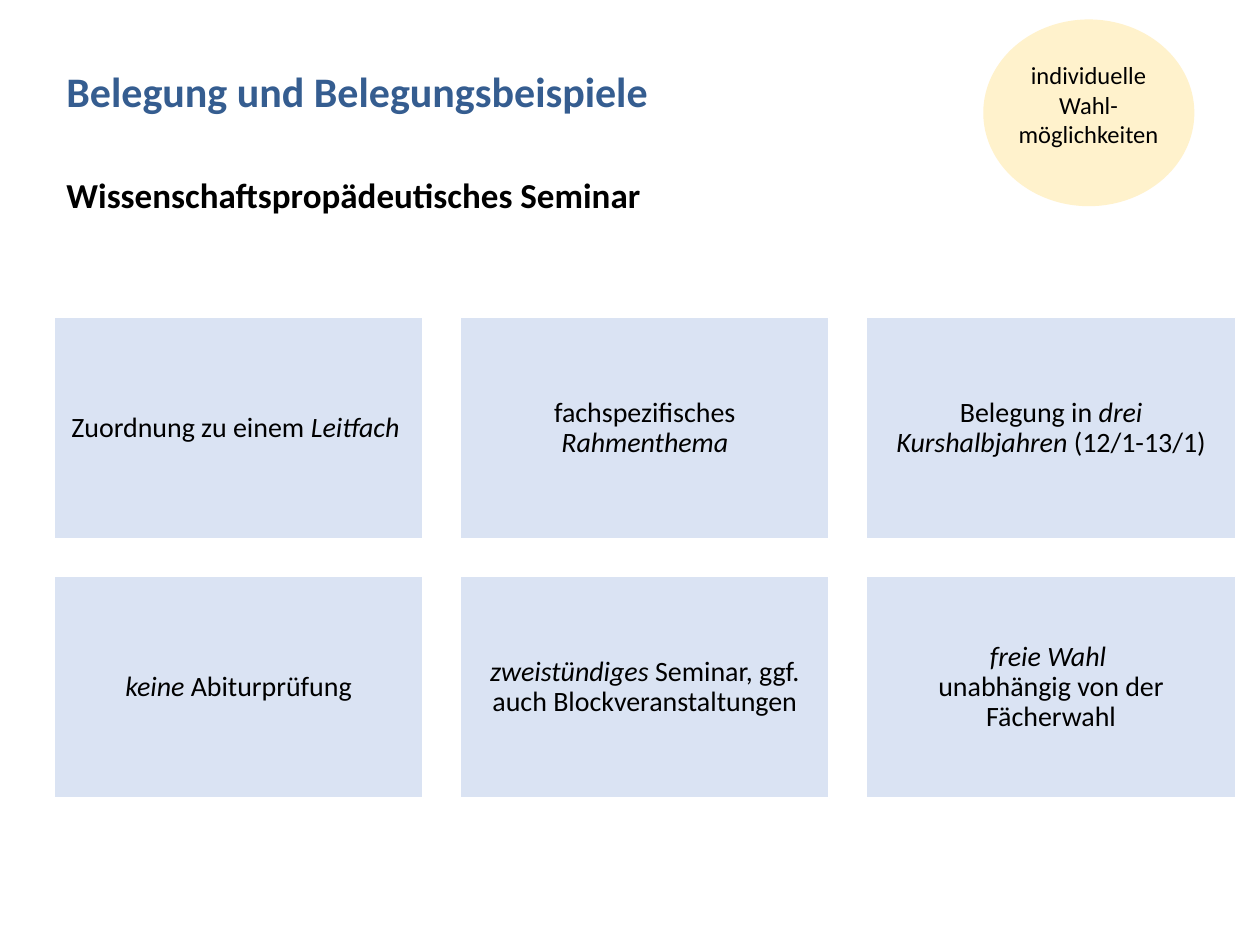
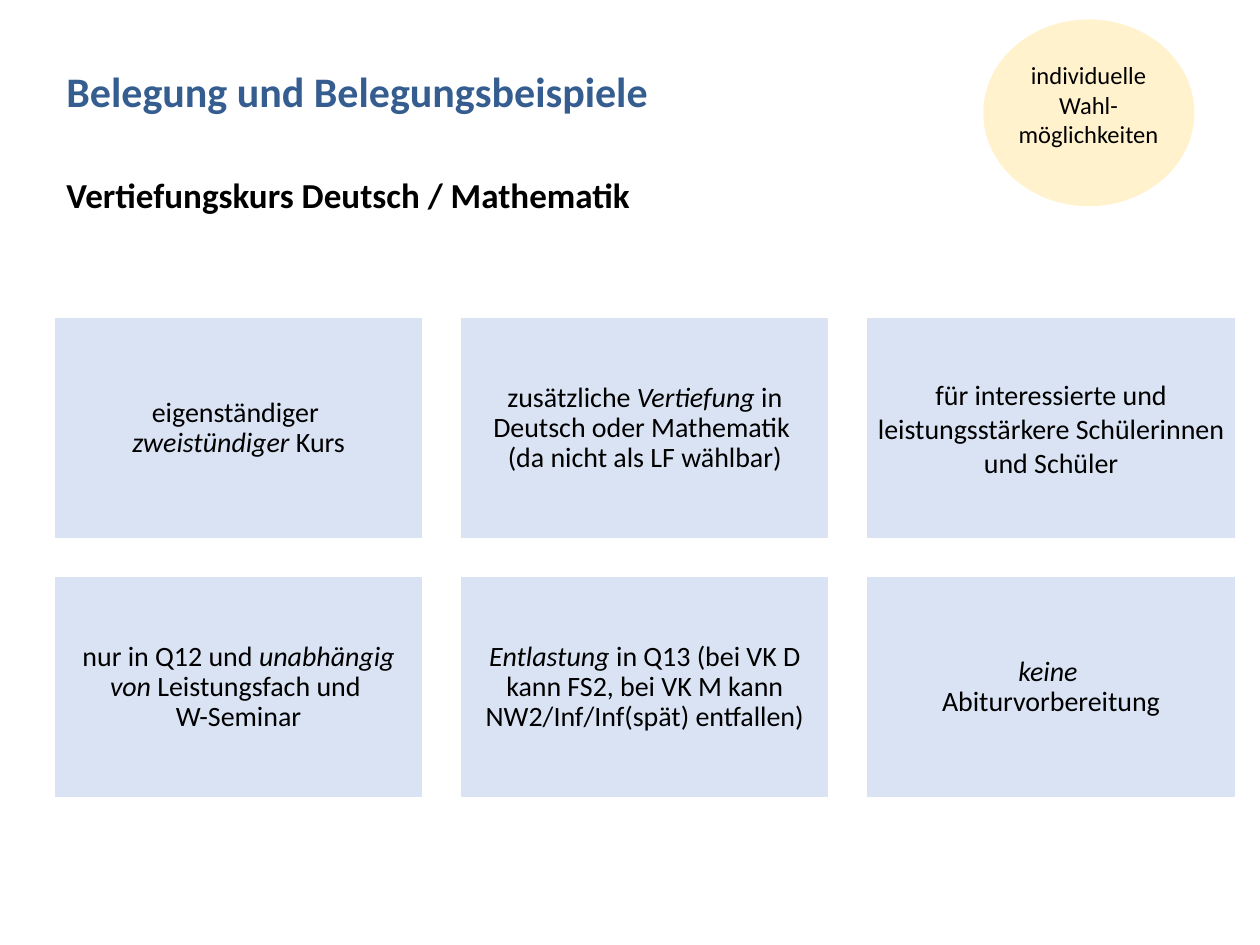
from dataclasses import dataclass

from pptx import Presentation
from pptx.dml.color import RGBColor as Rgb
from pptx.enum.shapes import MSO_SHAPE as Preset
from pptx.enum.text import MSO_ANCHOR as Anchor, PP_ALIGN as Align
from pptx.util import Cm, Pt


@dataclass(frozen=True)
class Theme:
    """Colours, typeface and type sizes shared by the slides."""
    font: str = "Calibri"
    heading: Rgb = Rgb(0x35, 0x5D, 0x90)
    ink: Rgb = Rgb(0, 0, 0)
    card: Rgb = Rgb(0xDA, 0xE3, 0xF3)
    card_edge: Rgb = Rgb(0xFF, 0xFF, 0xFF)
    badge: Rgb = Rgb(0xFF, 0xF2, 0xCC)
    heading_size: Pt = Pt(24)
    topic_size: Pt = Pt(20)
    card_size: Pt = Pt(16)
    badge_size: Pt = Pt(14)


THEME = Theme()
LEFT = 1.09
GRID_TOP = 6.4
CARD_WIDTH, CARD_HEIGHT = 7.44, 4.47
CARD_GAP = 0.75
CARD_INSET = Cm(0.18)
COLUMNS = 3
HEADING = "Belegung und Belegungsbeispiele"
BADGE_LINES = ("individuelle", "Wahl-", "möglichkeiten")

TOPICS = {
    "Wissenschaftspropädeutisches Seminar": (
        ("Zuordnung zu einem *Leitfach *", 0.9),
        ("fachspezifisches *Rahmenthema*", 0.9),
        ("Belegung in *drei Kurshalbjahren *(12/1-13/1)", 0.9),
        ("*keine *Abiturprüfung", 0.9),
        ("*zweistündiges *Seminar, ggf. auch Blockveranstaltungen", 0.9),
        ("*freie Wahl \n*unabhängig von der Fächerwahl", 0.9),
    ),
    "Vertiefungskurs Deutsch / Mathematik": (
        ("eigenständiger \n*zweistündiger* Kurs", 0.9),
        ("zusätzliche *Vertiefung* in Deutsch oder Mathematik \n"
         "(da nicht als LF wählbar)", 0.9),
        ("für interessierte und leistungsstärkere Schülerinnen und Schüler", 1.0),
        ("nur in Q12 und *unabhängig von* Leistungsfach und \nW-Seminar", 0.9),
        ("*Entlastung *in Q13 (bei VK D kann FS2, bei VK M kann "
         "NW2/Inf/Inf(spät) entfallen)", 0.9),
        ("*keine \n*Abiturvorbereitung", 0.9),
    ),
}


def style_paragraph(paragraph, size, color=THEME.ink, bold=False, align=Align.LEFT):
    """Set the font and alignment of a whole paragraph."""
    font = paragraph.font
    font.name, font.size, font.bold = THEME.font, size, bold
    font.color.rgb = color
    paragraph.alignment = align


def add_marked_text(paragraph, marked):
    """Add runs, with the parts between asterisks in italics."""
    for index, part in enumerate(marked.split("*")):
        for line_index, line in enumerate(part.split("\n")):
            if line_index:
                paragraph.add_line_break()
            if line:
                run = paragraph.add_run()
                run.text = line
                if index % 2:
                    run.font.italic = True


def add_text(slide, lines, left, top, width, height, **style):
    """Add a text box with one paragraph per line."""
    frame = slide.shapes.add_textbox(Cm(left), Cm(top), Cm(width), Cm(height)).text_frame
    frame.word_wrap = True
    frame.text = "\n".join(lines)
    for paragraph in frame.paragraphs:
        style_paragraph(paragraph, **style)


def add_filled(slide, preset, left, top, width, height, fill, edge):
    """Add a flat preset shape with a thin outline."""
    shape = slide.shapes.add_shape(preset, Cm(left), Cm(top), Cm(width), Cm(height))
    shape.shadow.inherit = False
    shape.fill.solid()
    shape.fill.fore_color.rgb = fill
    shape.line.color.rgb = edge
    shape.line.width = Pt(1)
    return shape


def add_card(slide, left, top, marked, spacing):
    """Add one card with its centred statement."""
    card = add_filled(slide, Preset.RECTANGLE, left, top, CARD_WIDTH, CARD_HEIGHT,
                      THEME.card, THEME.card_edge)
    frame = card.text_frame
    frame.word_wrap = True
    frame.vertical_anchor = Anchor.MIDDLE
    frame.margin_left = frame.margin_right = CARD_INSET
    frame.margin_top = frame.margin_bottom = CARD_INSET
    statement = frame.paragraphs[0]
    style_paragraph(statement, THEME.card_size, align=Align.CENTER)
    statement.line_spacing = spacing
    add_marked_text(statement, marked)


def add_card_grid(slide, cards):
    """Lay the cards out row by row with equal gaps."""
    for index, (marked, spacing) in enumerate(cards):
        row, column = divmod(index, COLUMNS)
        add_card(slide, LEFT + column * (CARD_WIDTH + CARD_GAP),
                 GRID_TOP + row * (CARD_HEIGHT + CARD_GAP), marked, spacing)


def add_badge(slide):
    """Add the round badge in the top right corner."""
    add_filled(slide, Preset.OVAL, 19.84, 0.41, 4.22, 3.73, THEME.badge, THEME.badge)
    add_text(slide, BADGE_LINES, 20.14, 1.09, 3.61, 2.06,
             size=THEME.badge_size, align=Align.CENTER)


def add_topic_slide(deck, topic, cards):
    """Add a slide with heading, topic, cards and badge."""
    slide = deck.slides.add_slide(deck.slide_layouts[6])
    add_text(slide, [HEADING], LEFT, 1.19, 23.8, 2.2,
             size=THEME.heading_size, color=THEME.heading, bold=True)
    add_text(slide, [topic], LEFT, 3.38, 22.99, 1.12, size=THEME.topic_size, bold=True)
    add_card_grid(slide, cards)
    add_badge(slide)


def main():
    """Build and save the deck."""
    deck = Presentation()
    deck.slide_width, deck.slide_height = Cm(25.4), Cm(19.05)
    for topic, cards in TOPICS.items():
        add_topic_slide(deck, topic, cards)
    deck.save("out.pptx")


if __name__ == "__main__":
    main()
